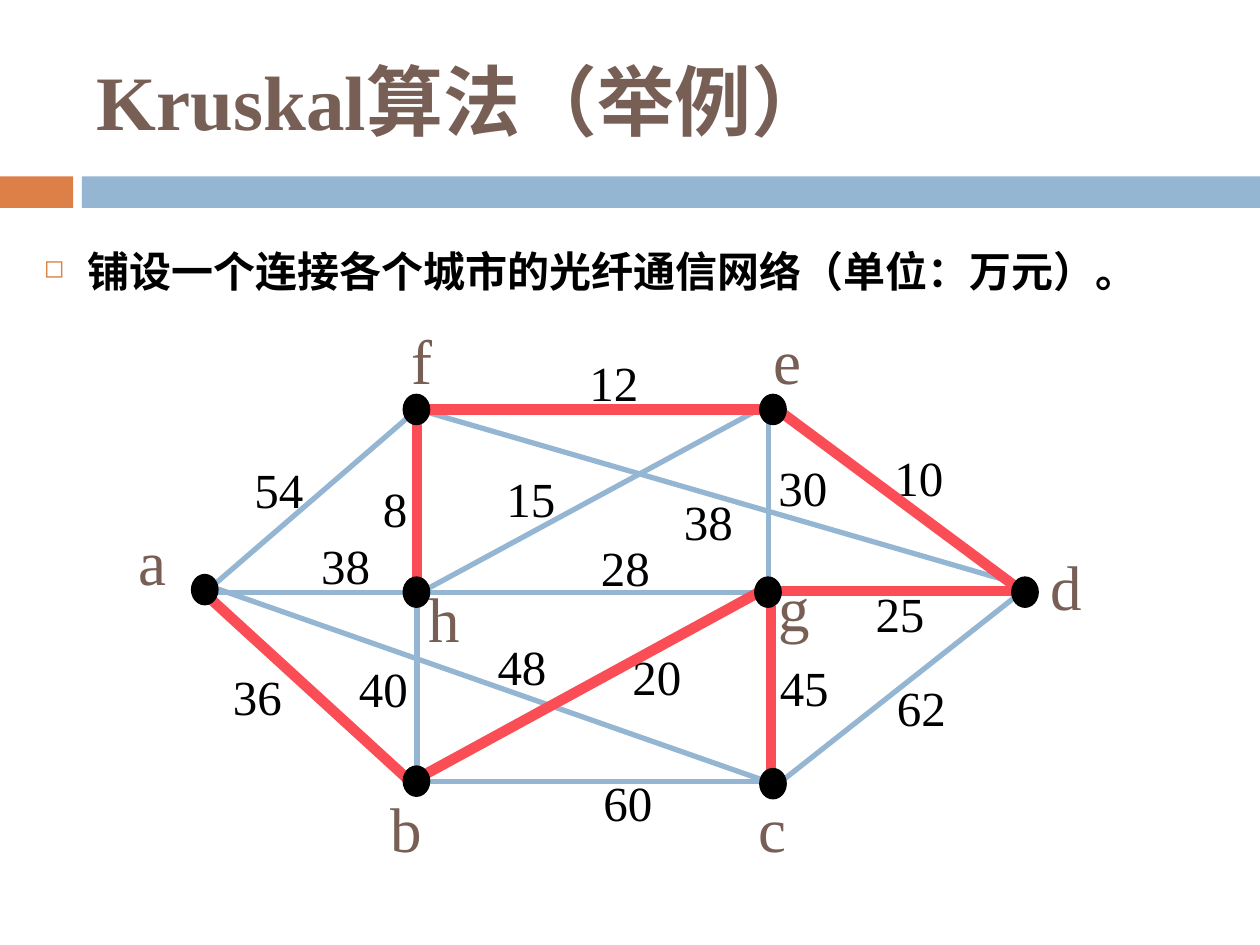
from pptx import Presentation
from pptx import util as u
from pptx.dml.color import RGBColor
from pptx.enum import shapes, text
from pptx.oxml.ns import qn
from lxml import etree

FONT = "Times New Roman"
BROWN, BLUE, ORANGE, RED, BLACK = "775F55", "94B6D2", "DD8047", "FB4D55", "000000"
DOT_WIDTH, DOT_HEIGHT = 0.21, 0.24

CITIES = {
    "a": ((1.52, 4.56), (1, 4.1, 0.42)),
    "b": ((3.2, 6.08), (3, 6.22, 0.45)),
    "c": ((6.03, 6.1), (5.92, 6.22, 0.42)),
    "d": ((8.03, 4.58), (8.24, 4.3, 0.45)),
    "e": ((6.03, 3.13), (6.04, 2.5, 0.42)),
    "f": ((3.2, 3.13), (3.17, 2.5, 0.37)),
    "g": ((5.99, 4.58), (6.08, 4.46, 0.45)),
    "h": ((3.2, 4.58), (3.3, 4.55, 0.45)),
}
CABLES = [
    ((3.25, 6.2), (6.15, 4.63)),
    ((3.25, 4.75), (6.15, 3.18)),
    ((6.08, 6.2), (1.63, 4.64)),
    ((8.07, 4.63), (3.35, 3.26)),
    ((3.31, 6.2), (3.31, 3.3)),
    ((6.1, 6.2), (6.1, 3.3)),
    ((1.63, 4.7), (3.31, 6.27)),
    ((3.31, 6.2), (6.14, 6.2)),
    ((6.14, 6.25), (8.13, 4.68)),
    ((1.63, 4.7), (8.13, 4.7)),
    ((1.63, 4.7), (3.31, 3.25)),
    ((3.31, 3.25), (6.14, 3.25)),
    ((6.14, 3.25), (8.13, 4.7)),
]
SPANNING_TREE = [
    ((3.31, 3.33), (3.31, 4.67)),
    ((6.17, 3.25), (8.08, 4.67)),
    ((3.33, 3.25), (6.08, 3.25)),
    ((6.08, 4.67), (3.33, 6.17)),
    ((6.14, 4.69), (8.14, 4.69)),
    ((1.58, 4.67), (3.32, 6.26)),
    ((6.12, 4.81), (6.12, 6.14)),
]
COSTS = [
    ("54", 1.92, 3.6), ("60", 4.69, 6.08), ("36", 1.75, 5.24), ("38", 2.45, 4.2),
    ("8", 2.94, 3.75), ("40", 2.75, 5.18), ("48", 3.85, 5), ("20", 4.92, 5.08),
    ("45", 6.09, 5.17), ("28", 4.67, 4.22), ("15", 3.92, 3.67), ("38", 5.33, 3.85),
    ("30", 6.08, 3.58), ("62", 7.02, 5.33), ("25", 6.85, 4.58), ("12", 4.58, 2.75),
    ("10", 7, 3.5),
]


def rgb(value):
    return RGBColor.from_string(value)


class GraphSlide:
    """Draws styled elements on the current slide."""

    def __init__(self, slide, font):
        self.slide = slide
        self.font = font

    def solid(self, kind, left, top, width, height, color, outline=None):
        solid = self.slide.shapes.add_shape(kind, *map(u.Inches, (left, top, width, height)))
        solid.shadow.inherit = False
        solid.fill.solid()
        solid.fill.fore_color.rgb = rgb(color)
        if outline:
            solid.line.color.rgb = rgb(color)
            solid.line.width = u.Pt(outline)
        else:
            solid.line.fill.background()

    def edge(self, start, end, color, width):
        edge = self.slide.shapes.add_connector(
            shapes.MSO_CONNECTOR.STRAIGHT, *map(u.Inches, start + end))
        edge.line.color.rgb = rgb(color)
        edge.line.width = u.Pt(width)
        etree.SubElement(edge._element.spPr, qn("a:effectLst"))

    def words(self, content, left, top, width, height, size, color, bold=False, wrap=False):
        box = self.slide.shapes.add_textbox(*map(u.Inches, (left, top, width, height)))
        frame = box.text_frame
        frame.word_wrap = wrap
        frame.auto_size = (text.MSO_AUTO_SIZE.NONE if wrap
                           else text.MSO_AUTO_SIZE.SHAPE_TO_FIT_TEXT)
        run = frame.paragraphs[0].add_run()
        run.text = content
        run.font.name = self.font
        run.font.size = u.Pt(size)
        run.font.bold = bold
        run.font.color.rgb = rgb(color)
        return frame

    def title(self, content):
        frame = self.words(content, 0.67, 0.25, 8.92, 1.08, 44, BROWN, True, True)
        frame.vertical_anchor = text.MSO_ANCHOR.MIDDLE

    def bullet(self, content):
        frame = self.words(content, 0.25, 1.86, 9.4, 0.63, 24, BLACK, True, True)
        paragraph = frame.paragraphs[0]
        paragraph.alignment = text.PP_ALIGN.JUSTIFY
        paragraph.line_spacing = 1.1
        paragraph.space_before = u.Pt(7)
        properties = paragraph._p.get_or_add_pPr()
        properties.set("marL", str(u.Inches(0.35)))
        properties.set("indent", str(u.Inches(-0.35)))
        tint = etree.SubElement(properties, qn("a:buClr"))
        etree.SubElement(tint, qn("a:srgbClr"), val=ORANGE)
        etree.SubElement(properties, qn("a:buSzPct"), val="60000")
        etree.SubElement(properties, qn("a:buChar"), char="◻")


def main():
    deck = Presentation()
    deck.slide_width, deck.slide_height = u.Inches(10), u.Inches(7.5)
    graph = GraphSlide(deck.slides.add_slide(deck.slide_layouts[6]), FONT)
    rectangle, oval = shapes.MSO_SHAPE.RECTANGLE, shapes.MSO_SHAPE.OVAL

    graph.solid(rectangle, 0, 1.4, 0.58, 0.25, ORANGE)
    graph.solid(rectangle, 0.65, 1.4, 9.35, 0.25, BLUE)
    graph.bullet("铺设一个连接各个城市的光纤通信网络（单位：万元）。")
    for start, end in CABLES:
        graph.edge(start, end, BLUE, 3)
    for cost, left, top in COSTS:
        graph.words(cost, left, top, 0.21 + 0.19 * len(cost), 0.57, 28, BLACK)
    for city, (_, (left, top, width)) in CITIES.items():
        graph.words(city, left, top, width, 0.7, 36, BROWN)
    for start, end in SPANNING_TREE:
        graph.edge(start, end, RED, 6)
    for (left, top), _ in CITIES.values():
        graph.solid(oval, left, top, DOT_WIDTH, DOT_HEIGHT, BLACK, 0.75)
    graph.title("Kruskal算法（举例）")
    deck.save("out.pptx")


if __name__ == "__main__":
    main()
